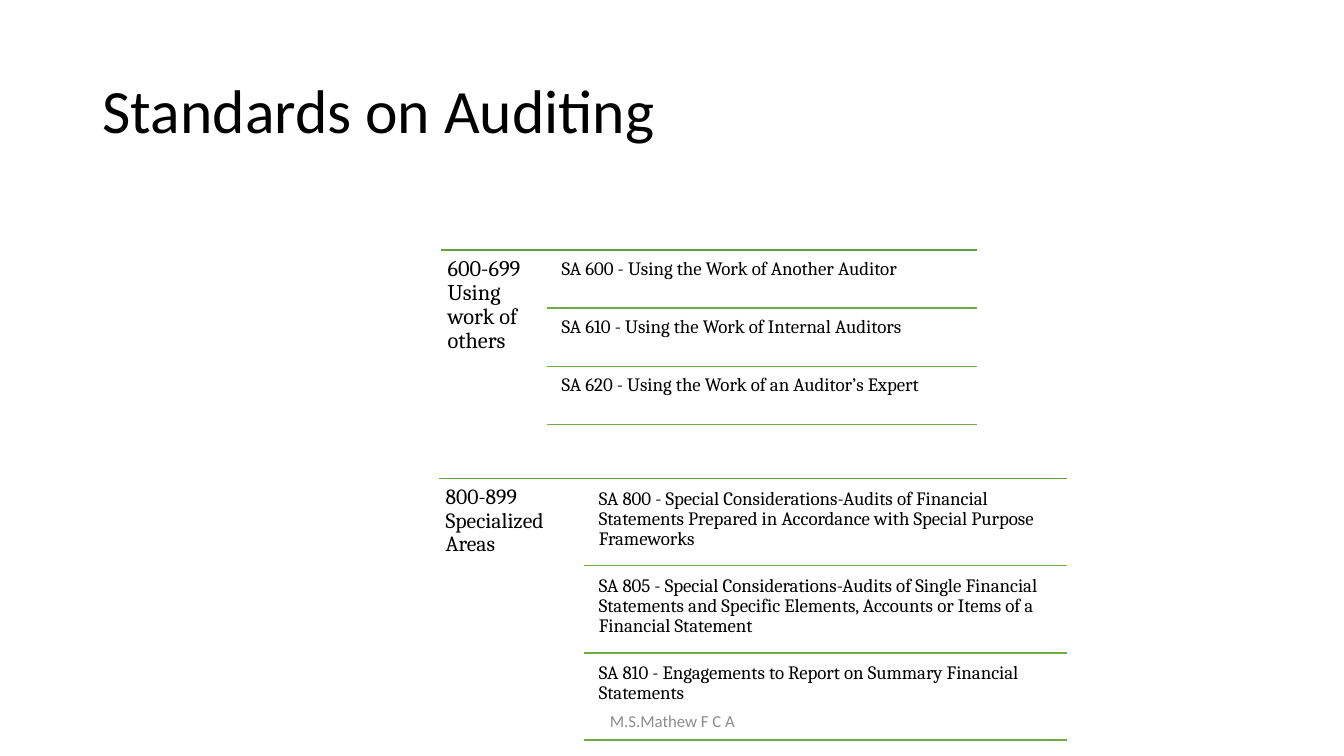
from dataclasses import dataclass

from lxml import etree
from pptx import Presentation
from pptx.dml.color import RGBColor
from pptx.enum.shapes import MSO_CONNECTOR
from pptx.enum.text import MSO_ANCHOR, PP_ALIGN
from pptx.oxml.ns import qn
from pptx.slide import Slide
from pptx.util import Inches, Pt

STRAIGHT = MSO_CONNECTOR.STRAIGHT
TOP, MIDDLE = MSO_ANCHOR.TOP, MSO_ANCHOR.MIDDLE
LEFT, CENTER = PP_ALIGN.LEFT, PP_ALIGN.CENTER


@dataclass(frozen=True)
class Style:
    font: str
    size: float
    color: str
    inset: tuple[float, float]
    leading: float = 0.9
    anchor: MSO_ANCHOR = TOP
    align: PP_ALIGN = LEFT


@dataclass(frozen=True)
class Theme:
    title: Style = Style("Calibri", 44, "000000", (0.1, 0.05), anchor=MIDDLE)
    wide: Style = Style("Cambria", 16, "000000", (0.07, 0.07))
    head: Style = Style("Cambria", 15.5, "000000", (0.07, 0.07))
    item: Style = Style("Cambria", 13.5, "000000", (0.06, 0.06))
    footer: Style = Style("Calibri", 12, "8C8C8C", (0.1, 0.05), 1, MIDDLE, CENTER)
    top_rule: str = "669D40"
    rule: str = "70AD47"
    weight: float = 1


@dataclass(frozen=True)
class Box:
    left: float
    top: float
    width: float
    height: float


@dataclass(frozen=True)
class Series:
    """One range of standards: a heading column beside ruled rows."""
    head: str
    style: Style
    area: Box
    split: float
    indent: float
    pad: float
    items: tuple[str, ...]


THEME = Theme()

SERIES = (
    Series(
        "600-699 Using work of others", THEME.wide,
        Box(4.37, 2.48, 5.32, 1.73), 1.06, 0.08, 0.03,
        (
            "SA 600 - Using the Work of Another Auditor",
            "SA 610 - Using the Work of Internal Auditors",
            "SA 620 - Using the Work of an Auditor’s Expert",
        ),
    ),
    Series(
        "800-899 Specialized Areas", THEME.head,
        Box(4.35, 4.75, 6.23, 2.59), 1.44, 0.09, 0.04,
        (
            "SA 800 - Special Considerations-Audits of Financial Statements "
            "Prepared in Accordance with Special Purpose Frameworks",
            "SA 805 - Special Considerations-Audits of Single Financial Statements "
            "and Specific Elements, Accounts or Items of a Financial Statement",
            "SA 810 - Engagements to Report on Summary Financial Statements",
        ),
    ),
)


def add_text(slide: Slide, text: str, box: Box, style: Style) -> None:
    shape = slide.shapes.add_textbox(
        Inches(box.left), Inches(box.top), Inches(box.width), Inches(box.height))
    frame = shape.text_frame
    frame.word_wrap = True
    frame.vertical_anchor = style.anchor
    across, down = map(Inches, style.inset)
    frame.margin_left = frame.margin_right = across
    frame.margin_top = frame.margin_bottom = down
    frame.text = text
    para = frame.paragraphs[0]
    para.alignment = style.align
    para.line_spacing = style.leading
    font = para.runs[0].font
    font.name = style.font
    font.size = Pt(style.size)
    font.color.rgb = RGBColor.from_string(style.color)


def add_rule(slide: Slide, left: float, right: float, top: float, color: str) -> None:
    line = slide.shapes.add_connector(
        STRAIGHT, Inches(left), Inches(top), Inches(right), Inches(top))
    line.line.color.rgb = RGBColor.from_string(color)
    line.line.width = Pt(THEME.weight)
    etree.SubElement(line._element.spPr, qn("a:effectLst"))


def add_series(slide: Slide, series: Series) -> None:
    area = series.area
    right = area.left + area.width
    split = area.left + series.split
    inner = split + series.indent
    pitch = area.height / len(series.items)
    add_rule(slide, area.left, right, area.top, THEME.top_rule)
    add_text(slide, series.head,
             Box(area.left, area.top, series.split, area.height), series.style)
    for row, item in enumerate(series.items):
        top = area.top + row * pitch
        cell = Box(inner, top + series.pad, right - inner, pitch - series.pad)
        add_text(slide, item, cell, THEME.item)
        add_rule(slide, split, right, top + pitch, THEME.rule)


def main() -> None:
    deck = Presentation()
    deck.slide_width, deck.slide_height = Inches(13.33), Inches(7.5)
    slide = deck.slides.add_slide(deck.slide_layouts[6])
    add_text(slide, "Standards on Auditing", Box(0.92, 0.4, 11.5, 1.45), THEME.title)
    for series in SERIES:
        add_series(slide, series)
    add_text(slide, "M.S.Mathew F C A", Box(4.42, 6.95, 4.5, 0.4), THEME.footer)
    deck.save("out.pptx")


if __name__ == "__main__":
    main()
